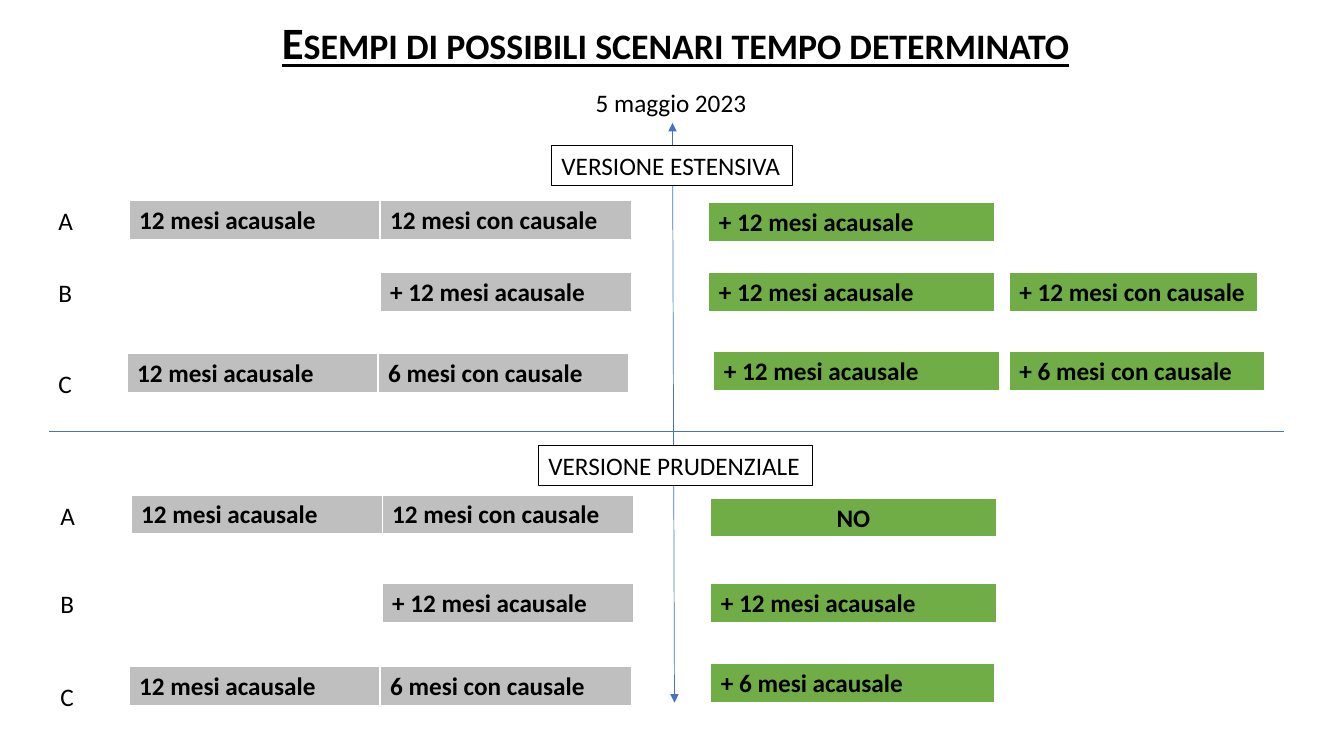
"""Build the slide comparing fixed-term contract scenarios before and after 5 May 2023."""
from lxml.etree import SubElement
from pptx import Presentation
from pptx.dml.color import RGBColor
from pptx.enum.shapes import MSO_CONNECTOR, MSO_SHAPE
from pptx.enum.text import MSO_ANCHOR, PP_ALIGN
from pptx.oxml.ns import qn
from pptx.util import Inches, Pt

BLACK = RGBColor(0x00, 0x00, 0x00)
WHITE = RGBColor(0xFF, 0xFF, 0xFF)
GREY = RGBColor(0xBF, 0xBF, 0xBF)
GREEN = RGBColor(0x70, 0xAD, 0x47)
BLUE = RGBColor(0x44, 0x72, 0xC4)

TITLE = "Esempi di possibili scenari tempo determinato"
DATE = "5 maggio 2023"
FREE, CAUSED, SHORT = "12 mesi acausale", "12 mesi con causale", "6 mesi con causale"
MORE = "+ " + FREE

# Version: name, box (left, top, width), column shift, rows.
# Row: letter, letter top, grey (left, top, labels), green top, green (left, width, label).
VERSIONS = [
    ("VERSIONE ESTENSIVA", (5.47, 1.44, 2.39), 0, [
        ("A", 1.99, (1.28, 1.99, [FREE, CAUSED]), 2.01, [(7.03, 2.83, MORE)]),
        ("B", 2.7, (3.77, 2.7, [MORE]), 2.7,
         [(7.03, 2.83, MORE), (10.01, 2.46, "+ " + CAUSED)]),
        ("C", 3.61, (1.26, 3.51, [FREE, SHORT]), 3.49,
         [(7.08, 2.83, MORE), (10.01, 2.53, "+ " + SHORT)]),
    ]),
    ("VERSIONE PRUDENZIALE", (5.34, 4.42, 2.72), 0.02, [
        ("A", 4.91, (1.28, 4.91, [FREE, CAUSED]), 4.94, [(7.03, 2.83, "NO")]),
        ("B", 5.79, (3.77, 5.79, [MORE]), 5.79, [(7.03, 2.83, MORE)]),
        ("C", 6.71, (1.26, 6.61, [FREE, SHORT]), 6.58,
         [(7.03, 2.81, "+ 6 mesi acausale")]),
    ]),
]
LETTER_LEFT, LETTER_WIDTH = 0.48, 0.35
GREY_WIDTH, BAR_HEIGHT = 2.49, 0.4
BORDERS = {"a:lnL": 1, "a:lnR": 1, "a:lnT": 1, "a:lnB": 3}
PLAIN = {"name": "Calibri", "size": Pt(18), "bold": False}
STRONG = {**PLAIN, "bold": True}
HEADING = {**STRONG, "size": Pt(32), "underline": True}


def write(frame, text, style, align=PP_ALIGN.LEFT):
    para = frame.paragraphs[0]
    para.alignment = align
    span = para.add_run()
    span.text = text
    for key, value in style.items():
        setattr(span.font, key, value)
    span.font.color.rgb = BLACK
    return span


def add_label(page, text, left, top, width, wrap=False, framed=False):
    area = [Inches(v) for v in (left, top, width, BAR_HEIGHT)]
    if framed:
        box = page.shapes.add_shape(MSO_SHAPE.RECTANGLE, *area)
        box.shadow.inherit = False
        box.fill.solid()
        box.fill.fore_color.rgb = WHITE
        box.line.color.rgb = BLACK
        box.line.width = Pt(0.75)
    else:
        box = page.shapes.add_textbox(*area)
    box.text_frame.word_wrap = wrap
    box.text_frame.vertical_anchor = MSO_ANCHOR.TOP
    write(box.text_frame, text, PLAIN)


def add_bar(page, labels, left, top, width, colour):
    area = [Inches(v) for v in (left, top, width * len(labels), BAR_HEIGHT)]
    table = page.shapes.add_table(1, len(labels), *area).table
    table.first_row = table.horz_banding = False
    for cell, label in zip(table.rows[0].cells, labels):
        properties = cell._tc.get_or_add_tcPr()
        for tag, points in BORDERS.items():
            border = SubElement(properties, qn(tag), w=str(Pt(points)))
            fill = SubElement(border, qn("a:solidFill"))
            SubElement(fill, qn("a:srgbClr"), val=str(WHITE))
        cell.fill.solid()
        cell.fill.fore_color.rgb = colour
        align = PP_ALIGN.CENTER if label == "NO" else PP_ALIGN.LEFT
        write(cell.text_frame, label, STRONG, align)


def add_line(page, *ends, arrows=False):
    line = page.shapes.add_connector(MSO_CONNECTOR.STRAIGHT, *[Inches(v) for v in ends])
    line.line.color.rgb = BLUE
    line.line.width = Pt(0.5)
    if arrows:
        for tag in ("a:headEnd", "a:tailEnd"):
            SubElement(line.line._get_or_add_ln(), qn(tag), type="triangle")
    SubElement(line._element.spPr, qn("a:effectLst"))


def add_title(page):
    title = page.shapes.title
    area = {"left": 0.95, "top": 0.16, "width": 11.5, "height": 0.83}
    for key, value in area.items():
        setattr(title, key, Inches(value))
    title.text_frame.vertical_anchor = MSO_ANCHOR.TOP
    span = write(title.text_frame, TITLE, HEADING, PP_ALIGN.CENTER)
    span._r.get_or_add_rPr().set("cap", "small")
    title.text_frame.paragraphs[0].line_spacing = 0.9


def main():
    deck = Presentation()
    deck.slide_width, deck.slide_height = Inches(13.33), Inches(7.5)
    page = deck.slides.add_slide(deck.slide_layouts[5])
    add_title(page)
    add_label(page, DATE, 5.81, 0.82, 1.71)
    add_line(page, 6.67, 1.22, 6.69, 6.97, arrows=True)
    add_line(page, 0.49, 4.28, 12.74, 4.28)
    for name, (box_left, box_top, box_width), shift, rows in VERSIONS:
        for letter, letter_top, (left, top, labels), green_top, greens in rows:
            add_label(page, letter, LETTER_LEFT + shift, letter_top, LETTER_WIDTH, wrap=True)
            add_bar(page, labels, left + shift, top, GREY_WIDTH, GREY)
            for green_left, width, label in greens:
                add_bar(page, [label], green_left + shift, green_top, width, GREEN)
        add_label(page, name, box_left, box_top, box_width, framed=True)
    deck.save("out.pptx")


if __name__ == "__main__":
    main()
